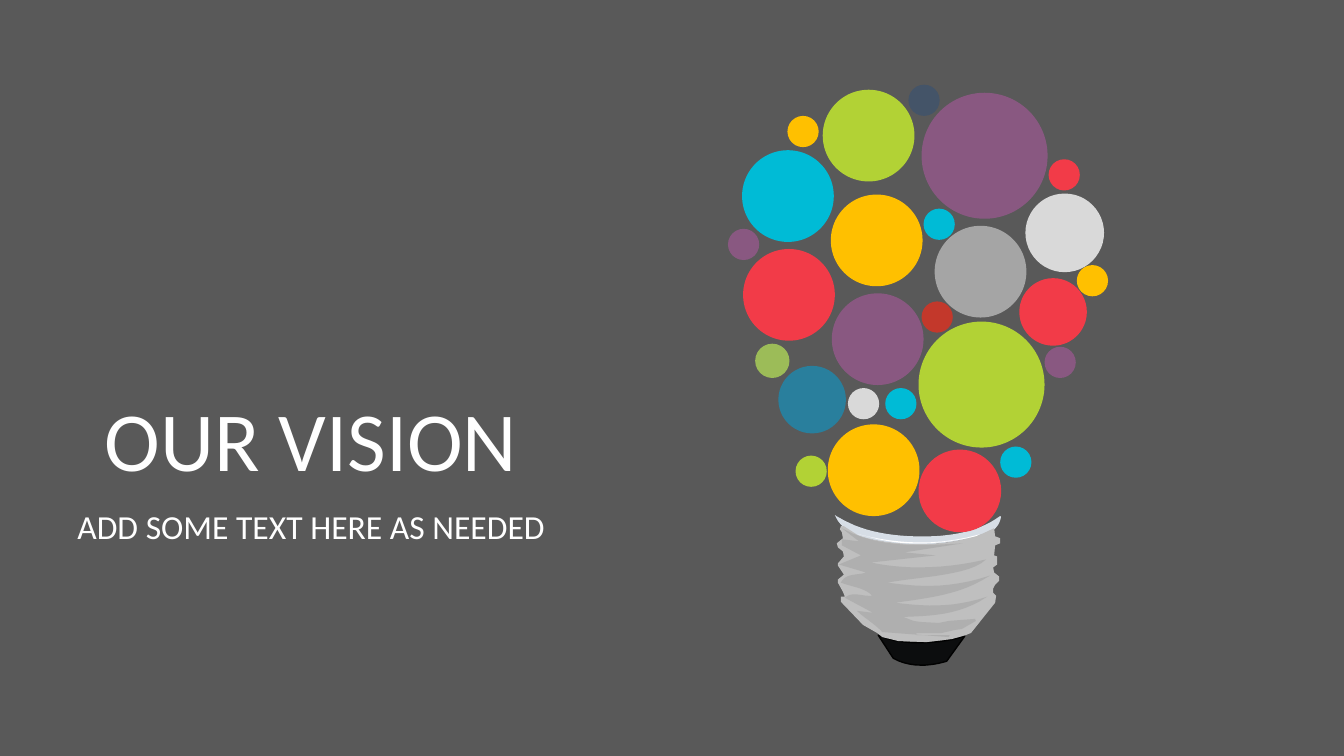
from lxml import etree
from pptx import Presentation
from pptx import util as u
from pptx.dml.color import RGBColor
from pptx.enum import shapes, text
from pptx.oxml.ns import qn

COLORS = {
    "background": "595959", "white": "FFFFFF", "collar": "D7DEE6",
    "tip": "0C0D0E", "tip edge": "010101", "screw": "BFBFBF", "shade": "A6A6A6",
    "purple": "895881", "red": "F23B48", "yellow": "FFC000", "lime": "B2D235",
    "cyan": "00BBD6", "blue": "297F9D", "gray": "A5A5A5", "silver": "D9D9D9",
    "sage": "9CBC58", "brick": "C3382B", "navy": "445468",
}

# Wording, top, height, anchor, paragraph format, font size
TEXTS = [
    ("OUR VISION", 2.3, 2.61, text.MSO_ANCHOR.BOTTOM, {"space_before": u.Pt(0)}, 60),
    ("ADD SOME TEXT HERE AS NEEDED", 5.01, 1.81, text.MSO_ANCHOR.TOP,
     {"space_before": u.Pt(10)}, 24),
]
TEXT_LEFT, TEXT_WIDTH = 0.29, 5.59

# Diameter in inches: colour, left and top of each bubble
BUBBLES = {
    1.25: [("purple", 9.14, 0.92), ("lime", 9.11, 3.19)],
    0.91: [("purple", 8.25, 2.91), ("red", 7.37, 2.47), ("yellow", 8.24, 1.93),
           ("lime", 8.16, 0.89), ("cyan", 7.36, 1.49), ("gray", 9.27, 2.24),
           ("yellow", 8.21, 4.21)],
    0.82: [("red", 9.11, 4.46)],
    0.78: [("silver", 10.17, 1.92)],
    0.67: [("blue", 7.72, 3.63), ("red", 10.11, 2.76)],
    0.34: [("sage", 7.49, 3.41)],
    0.31: [("cyan", 9.16, 2.07), ("brick", 9.14, 2.99), ("yellow", 7.81, 1.15),
           ("cyan", 8.78, 3.85), ("silver", 8.41, 3.85), ("lime", 7.89, 4.52),
           ("cyan", 9.92, 4.43), ("red", 10.4, 1.58), ("purple", 7.22, 2.27),
           ("navy", 9.01, 0.84), ("purple", 10.36, 3.44), ("yellow", 10.68, 2.63)],
}

# Outlines in hundredths of an inch: two numbers are a corner, six a Bézier curve
COLLAR = [
    (828, 511), (833, 524, 848, 532, 863, 535), (898, 543, 935, 542, 970, 532),
    (977, 530, 985, 528, 989, 522), (991, 520, 994, 512, 992, 512),
    (973, 526, 949, 531, 926, 532), (899, 533, 872, 531, 847, 521),
    (841, 518, 834, 515, 828, 511),
]
TIP = [
    (957, 631), (939, 656), (932, 658, 907, 665, 886, 653), (871, 630),
    (902, 645, 951, 634, 957, 631),
]
SCREW = [
    (986, 524), (987, 532), (992, 534), (992, 539), (987, 541), (986, 551),
    (989, 552), (989, 560), (985, 563), (986, 568), (991, 572), (991, 576),
    (987, 580), (985, 584), (985, 588), (988, 591), (987, 598), (963, 628),
    (958, 630), (944, 634), (919, 637), (891, 636), (875, 632), (870, 628),
    (856, 620), (834, 597), (834, 592), (838, 592), (836, 587), (831, 578),
    (831, 575), (837, 570), (831, 561), (831, 559), (837, 552), (836, 547),
    (831, 543), (830, 539), (836, 534), (835, 528), (833, 525), (834, 522),
    (837, 522), (851, 531), (878, 541, 944, 547, 986, 524),
]
SHADE = [
    (941, 632), (942, 630), (909, 630), (909, 628), (934, 628), (947, 625),
    (954, 624), (968, 616), (967, 614), (941, 616), (931, 618), (913, 617),
    (906, 616), (896, 612), (921, 611, 951, 611, 979, 592),
    (943, 604, 913, 601, 888, 598), (920, 593, 951, 591, 982, 571),
    (937, 586, 905, 581, 880, 578), (913, 572, 962, 571, 978, 555),
    (931, 566, 890, 564, 864, 558), (928, 551), (897, 548), (955, 539),
    (929, 540, 875, 547, 835, 524), (852, 537), (835, 535), (835, 541),
    (854, 551), (832, 560), (859, 568), (851, 571, 839, 568, 834, 578),
    (844, 582, 858, 583, 865, 591), (855, 592, 846, 586, 838, 593),
    (866, 608), (850, 606), (857, 613, 868, 619, 875, 627),
]
GLEAM = [
    (972, 530), (920, 545, 876, 536, 851, 530), (860, 532),
    (904, 546, 951, 536, 968, 532),
]
# Outline, fill, opacity in percent, edge colour
SOCKET = [
    (COLLAR, "collar", 100, None), (TIP, "tip", 100, "tip edge"),
    (SCREW, "screw", 100, None), (SHADE, "shade", 63, None),
    (GLEAM, "white", 100, None),
]
CURVE_STEPS = 12
FINENESS = 10


def rgb(name):
    return RGBColor.from_string(COLORS[name])


def paint(shape, fill, edge=None):
    shape.shadow.inherit = False
    shape.fill.solid()
    shape.fill.fore_color.rgb = rgb(fill)
    if edge:
        shape.line.color.rgb = rgb(edge)
        shape.line.width = u.Pt(1)
    else:
        shape.line.fill.background()


def trace(outline):
    """Turn corners and Bézier curves into a list of closely spaced points."""
    points = [outline[0]]
    for step in outline[1:]:
        if len(step) == 2:
            points.append(step)
            continue
        start, (x1, y1, x2, y2, x3, y3) = points[-1], step
        for i in range(1, CURVE_STEPS + 1):
            t = i / CURVE_STEPS
            s = 1 - t
            weights = (s ** 3, 3 * s * s * t, 3 * s * t * t, t ** 3)
            points.append(tuple(
                sum(w * c for w, c in zip(weights, axis))
                for axis in ((start[0], x1, x2, x3), (start[1], y1, y2, y3))))
    return [(x * FINENESS, y * FINENESS) for x, y in points]


def write(box, wording, top, height, anchor, spacing, size):
    box.left, box.top = u.Inches(TEXT_LEFT), u.Inches(top)
    box.width, box.height = u.Inches(TEXT_WIDTH), u.Inches(height)
    frame = box.text_frame
    frame.text = wording
    para = frame.paragraphs[0]
    font = para.runs[0].font
    formats = [
        (frame, {"word_wrap": True, "auto_size": text.MSO_AUTO_SIZE.NONE,
                 "vertical_anchor": anchor}),
        (para, {"alignment": text.PP_ALIGN.CENTER, "line_spacing": 0.9, **spacing}),
        (font, {"name": "Calibri", "size": u.Pt(size), "bold": False}),
    ]
    for target, values in formats:
        for key, value in values.items():
            setattr(target, key, value)
    font.color.rgb = rgb("white")


def main():
    deck = Presentation()
    deck.slide_width, deck.slide_height = u.Inches(13.33), u.Inches(7.5)
    page = deck.slides.add_slide(deck.slide_layouts[0])
    page.background.fill.solid()
    page.background.fill.fore_color.rgb = rgb("background")
    for box, content in zip(page.placeholders, TEXTS):
        write(box, *content)

    bulb = page.shapes.add_group_shape().shapes
    for outline, fill, opacity, edge in SOCKET:
        start, *points = trace(outline)
        builder = bulb.build_freeform(*start, scale=u.Inches(1) / (100 * FINENESS))
        builder.add_line_segments(points, close=True)
        part = builder.convert_to_shape()
        paint(part, fill, edge)
        if opacity < 100:
            color = part.fill._xPr.find(qn("a:solidFill"))[0]
            etree.SubElement(color, qn("a:alpha"), val=str(opacity * 1000))

    for diameter, bubbles in BUBBLES.items():
        for color, left, top in bubbles:
            bubble = bulb.add_shape(
                shapes.MSO_SHAPE.OVAL, *map(u.Inches, (left, top, diameter, diameter)))
            paint(bubble, color)
    deck.save("out.pptx")


if __name__ == "__main__":
    main()
